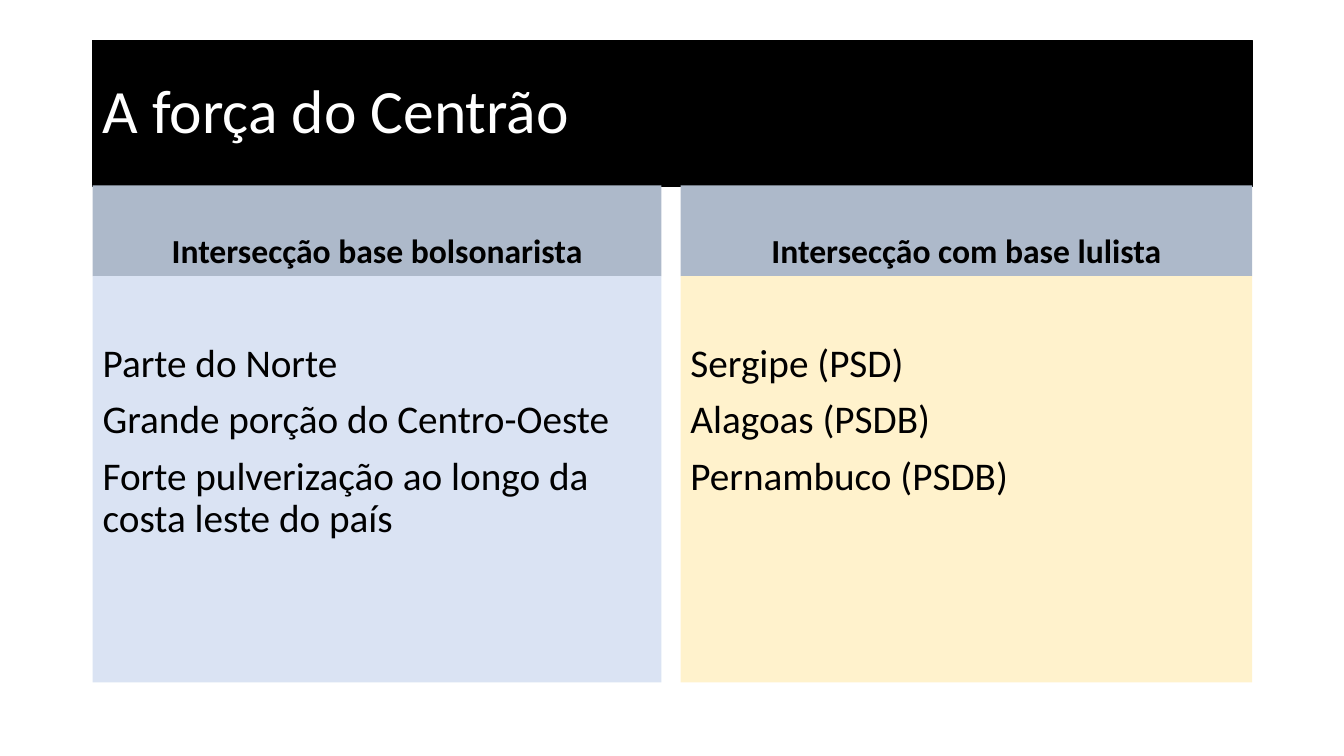
from pptx import Presentation
from pptx.dml.color import RGBColor
from pptx.enum.shapes import MSO_SHAPE as Preset
from pptx.enum.text import MSO_ANCHOR as Anchor, MSO_AUTO_SIZE as AutoSize, PP_ALIGN as Align
from pptx.util import Inches, Pt

BLACK = RGBColor(0x00, 0x00, 0x00)
WHITE = RGBColor(0xFF, 0xFF, 0xFF)
SLATE = RGBColor(0xAD, 0xB9, 0xCA)
PALE_BLUE = RGBColor(0xDA, 0xE3, 0xF3)
PALE_YELLOW = RGBColor(0xFF, 0xF2, 0xCC)

LEFT = 0.92
HEADING_TOP, HEADING_HEIGHT = 1.84, 0.9
LIST_TOP, LIST_HEIGHT = HEADING_TOP + HEADING_HEIGHT, 4.03
LIST_INSET = 0.67

COLUMNS = [
    (LEFT, 5.64, PALE_BLUE, "Intersecção base bolsonarista",
     ["Parte do Norte", "Grande porção do Centro-Oeste",
      "Forte pulverização ao longo da costa leste do país"]),
    (6.75, 5.67, PALE_YELLOW, "Intersecção com base lulista",
     ["Sergipe (PSD)", "Alagoas (PSDB)", "Pernambuco (PSDB)"]),
]


def fill_solid(shape, color):
    shape.fill.solid()
    shape.fill.fore_color.rgb = color


def write(shape, lines, size, color=BLACK, bold=False, align=Align.LEFT, anchor=Anchor.TOP):
    frame = shape.text_frame
    frame.word_wrap = True
    frame.auto_size = AutoSize.NONE
    frame.vertical_anchor = anchor
    for index, line in enumerate(lines):
        paragraph = frame.add_paragraph() if index else frame.paragraphs[0]
        paragraph.alignment = align
        paragraph.line_spacing = 0.9
        paragraph.space_before = Pt(10 if index else 0)
        run = paragraph.add_run()
        run.text = line
        run.font.name = "Calibri"
        run.font.size = Pt(size)
        run.font.bold = bold
        run.font.color.rgb = color


def add_panel(slide, left, top, width, height, color):
    panel = slide.shapes.add_shape(
        Preset.RECTANGLE, Inches(left), Inches(top), Inches(width), Inches(height))
    panel.shadow.inherit = False
    fill_solid(panel, color)
    panel.line.fill.background()
    return panel


def format_title(title, text):
    title.left, title.top = Inches(LEFT), Inches(0.4)
    title.width, title.height = Inches(11.5), Inches(1.45)
    fill_solid(title, BLACK)
    title.line.color.rgb = BLACK
    title.line.width = Pt(1)
    write(title, [text], 44, WHITE, anchor=Anchor.MIDDLE)


def add_column(slide, left, width, color, heading, items):
    heading_panel = add_panel(slide, left, HEADING_TOP, width, HEADING_HEIGHT, SLATE)
    write(heading_panel, [heading], 24, bold=True, align=Align.CENTER, anchor=Anchor.BOTTOM)
    list_panel = add_panel(slide, left, LIST_TOP, width, LIST_HEIGHT, color)
    list_panel.text_frame.margin_top = Inches(LIST_INSET)
    write(list_panel, items, 28)


def main():
    deck = Presentation()
    deck.slide_width, deck.slide_height = Inches(13.33), Inches(7.5)
    slide = deck.slides.add_slide(deck.slide_layouts.get_by_name("Title Only"))
    format_title(slide.shapes.title, "A força do Centrão")
    for column in COLUMNS:
        add_column(slide, *column)
    deck.save("out.pptx")


if __name__ == "__main__":
    main()
